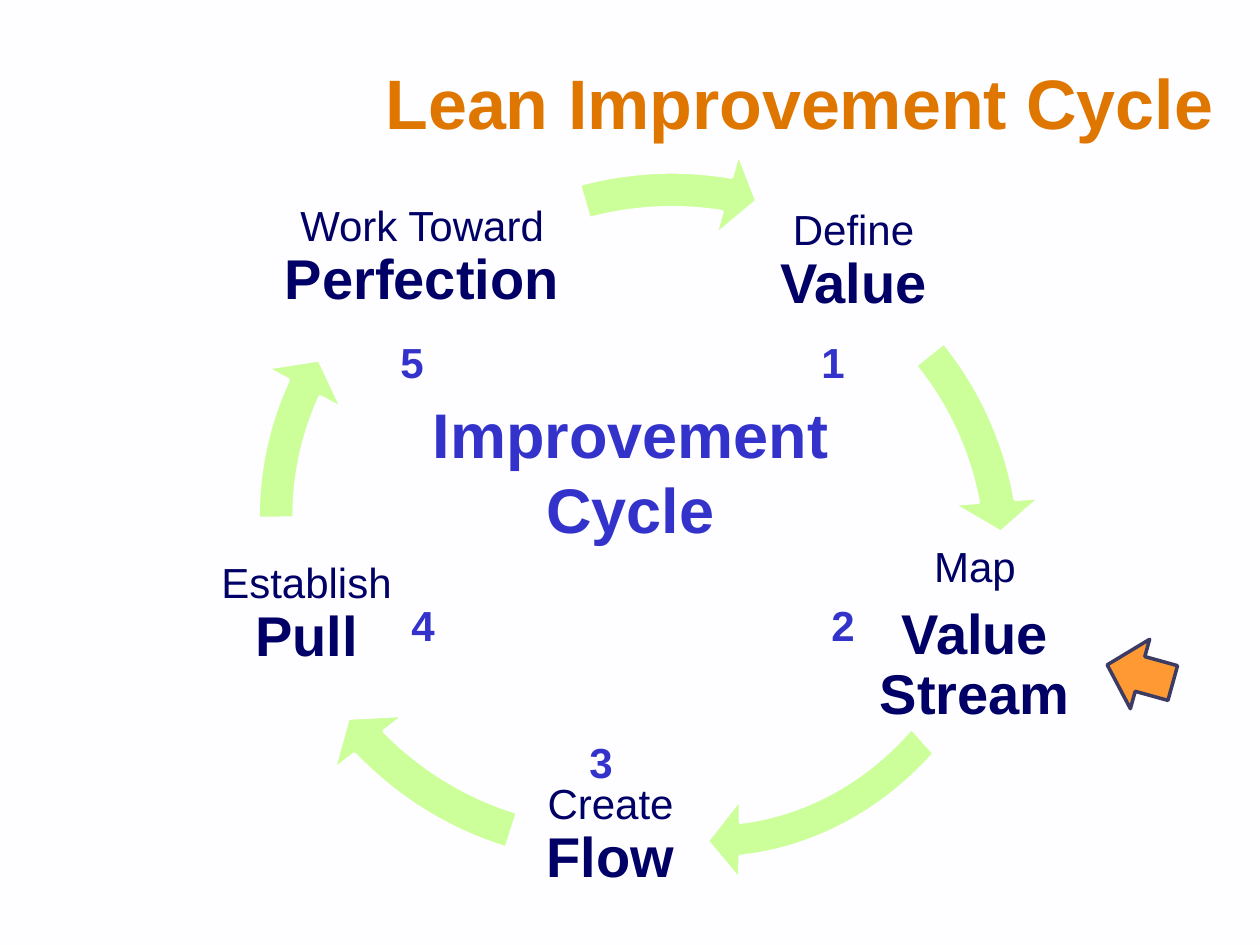
from pptx import Presentation
from pptx.dml.color import RGBColor
from pptx.enum.shapes import MSO_SHAPE
from pptx.enum.text import MSO_ANCHOR, PP_ALIGN
from pptx.util import Pt

EMU_PER_PX = 914400 / 126
SLIDE_SIZE = (1260, 945)
BACKGROUND = "FEFDFF"

TITLE = ("Lean Improvement Cycle", (373, 45, 861, 105))
CENTER = (["Improvement", "Cycle"], (415, 389, 431, 165))

# Lead words, key word, box, whether the key word is its own paragraph
STEPS = [
    ("Define", "Value", (757, 166, 193, 193), False),
    ("Map", "Value Stream", (840, 533, 270, 207), True),
    ("Create", "Flow", (514, 740, 193, 193), False),
    ("Establish", "Pull", (210, 519, 193, 193), False),
    ("Work Toward", "Perfection", (262, 150, 320, 217), False),
]
NUMBER_PLACES = [(809, 330), (819, 593), (577, 730), (399, 593), (388, 330)]
NUMBER_SIZE = (53, 63)

# Box, start angle and end angle in degrees
CYCLE_ARROWS = [
    ((305, 189, 741, 737), 321.33, 349.99),
    ((369, 121, 682, 761), 48.33, 84.88),
    ((233, 142, 756, 748), 107.49, 136.84),
    ((233, 155, 756, 721), 179.51, 202.5),
    ((304, 147, 736, 716), 253.88, 280.01),
]
POINTER = (1104, 640, 72, 68)

TITLE_FONT = {"size": Pt(40), "bold": True, "color": "DE7600"}
CENTER_FONT = {"size": Pt(36), "bold": True, "color": "3333CC"}
NUMBER_FONT = {"size": Pt(24), "bold": True, "color": "3333CC"}
LEAD_FONT = {"size": Pt(24), "bold": False, "color": "000066"}
KEY_FONT = {"size": Pt(32), "bold": True, "color": "000066"}


def px(*lengths):
    return [round(length * EMU_PER_PX) for length in lengths]


def color(value):
    return RGBColor.from_string(value)


def add_text(page, place, paragraphs, anchor=MSO_ANCHOR.TOP, inset=None, **layout):
    """Add a box of paragraphs, each a list of (text, font) spans."""
    frame = page.shapes.add_textbox(*px(*place)).text_frame
    frame.word_wrap = True
    frame.vertical_anchor = anchor
    if inset is not None:
        for side in ("left", "top", "right", "bottom"):
            setattr(frame, f"margin_{side}", px(inset)[0])
    for index, spans in enumerate(paragraphs):
        paragraph = frame.add_paragraph() if index else frame.paragraphs[0]
        for name, value in layout.items():
            setattr(paragraph, name, value)
        for text, font in spans:
            span = paragraph.add_run()
            span.text = text
            span.font.name = "Arial"
            for name, value in font.items():
                if name == "color":
                    span.font.color.rgb = color(value)
                else:
                    setattr(span.font, name, value)
    return frame


def add_arrow(page, kind, place, fill, line):
    arrow = page.shapes.add_shape(kind, *px(*place))
    arrow.shadow.inherit = False
    arrow.fill.solid()
    arrow.fill.fore_color.rgb = color(fill)
    arrow.line.color.rgb = color(line)
    arrow.line.width = Pt(2)
    return arrow


def add_cycle_arrow(page, place, start, end):
    arrow = add_arrow(page, MSO_SHAPE.CIRCULAR_ARROW, place, "CCFF99", BACKGROUND)
    thickness, head_angle, head_width = 0.05, 5.6, 0.06
    # Angles are stored in 60000ths of a degree, adjustments in 100000ths
    values = [thickness, head_angle * 0.6, end * 0.6, start * 0.6, head_width]
    for index, value in enumerate(values):
        arrow.adjustments[index] = value


def add_step(page, lead, key, place, split):
    if split:
        paragraphs = [[(lead, LEAD_FONT)], [(key, KEY_FONT)]]
    else:
        paragraphs = [[(lead + " ", LEAD_FONT), (key, KEY_FONT)]]
    frame = add_text(page, place, paragraphs, MSO_ANCHOR.MIDDLE, inset=4,
                     alignment=PP_ALIGN.CENTER, line_spacing=0.9)
    if split:
        frame.paragraphs[0].space_after = Pt(8)


def main():
    deck = Presentation()
    deck.slide_width, deck.slide_height = px(*SLIDE_SIZE)
    page = deck.slides.add_slide(deck.slide_layouts[6])
    page.background.fill.solid()
    page.background.fill.fore_color.rgb = color(BACKGROUND)

    title, title_place = TITLE
    add_text(page, title_place, [[(title, TITLE_FONT)]], MSO_ANCHOR.BOTTOM)
    for arrow in CYCLE_ARROWS:
        add_cycle_arrow(page, *arrow)
    for step in STEPS:
        add_step(page, *step)
    lines, center_place = CENTER
    add_text(page, center_place, [[(line, CENTER_FONT)] for line in lines],
             alignment=PP_ALIGN.CENTER)
    for number, place in enumerate(NUMBER_PLACES, start=1):
        add_text(page, place + NUMBER_SIZE, [[(str(number), NUMBER_FONT)]])
    pointer = add_arrow(page, MSO_SHAPE.DOWN_ARROW, POINTER, "FF9933", "3B3B64")
    pointer.rotation = 105.5

    deck.save("out.pptx")


if __name__ == "__main__":
    main()
